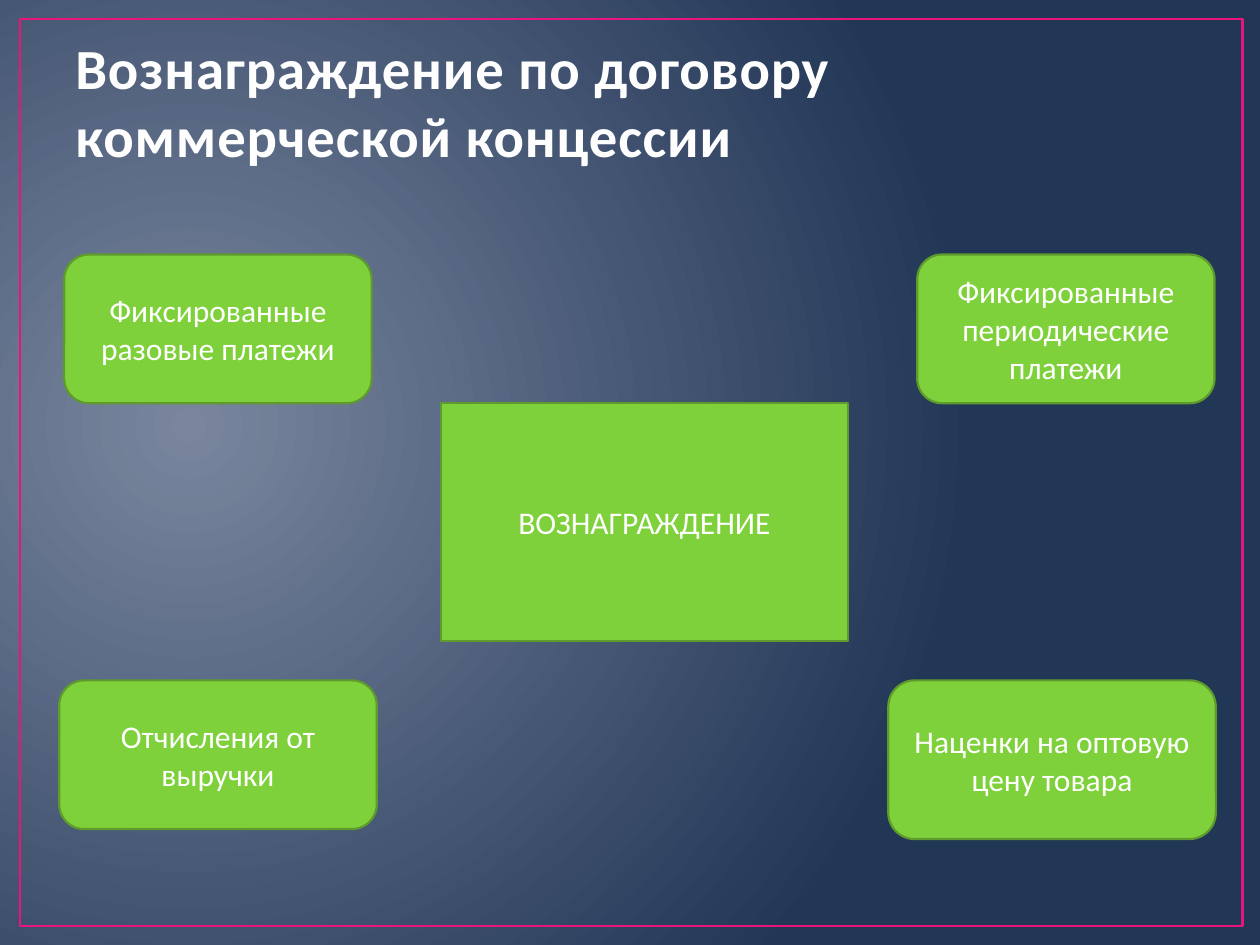
from dataclasses import dataclass

import pptx
import pptx.dml.color
import pptx.enum.shapes
import pptx.enum.text
import pptx.oxml
import pptx.oxml.ns
import pptx.util
from pptx.util import Inches

COLORS = {
    "glow": "79869E",
    "navy": "223656",
    "pink": "EA157A",
    "green": "7FD13B",
    "edge": "5E9B2C",
    "title": "FEFEFE",
    "white": "FFFFFF",
}
FONT = "Calibri"
RECT = pptx.enum.shapes.MSO_SHAPE.RECTANGLE
ROUND = pptx.enum.shapes.MSO_SHAPE.ROUNDED_RECTANGLE
ANCHOR = pptx.enum.text.MSO_ANCHOR
ALIGN = pptx.enum.text.PP_ALIGN


@dataclass
class Box:
    text: str
    left: float
    top: float
    width: float
    height: float
    kind: int = ROUND


TOP, LOW = 2.02, 5.4  # rows of payment types
BOXES = [
    Box("Фиксированные разовые платежи", 0.51, TOP, 2.44, 1.18),
    Box("Фиксированные периодические платежи", 7.28, TOP, 2.36, 1.18),
    Box("Отчисления от выручки", 0.47, LOW, 2.52, 1.18),
    Box("Наценки на оптовую цену товара", 7.05, LOW, 2.6, 1.26),
    Box("ВОЗНАГРАЖДЕНИЕ", 3.5, 3.2, 3.23, 1.89, RECT),
]


def color(name: str) -> pptx.dml.color.RGBColor:
    return pptx.dml.color.RGBColor.from_string(COLORS[name])


def add_back(slide) -> None:
    """Radial gradient, brightest near the left edge."""
    xml = f"""<p:bg {pptx.oxml.ns.nsdecls("p", "a")}><p:bgPr>
      <a:gradFill rotWithShape="1"><a:gsLst>
        <a:gs pos="0"><a:srgbClr val="{COLORS['glow']}"/></a:gs>
        <a:gs pos="100000"><a:srgbClr val="{COLORS['navy']}"/></a:gs>
      </a:gsLst><a:path path="circle">
        <a:fillToRect l="15000" t="50000" r="85000" b="60000"/>
      </a:path></a:gradFill><a:effectLst/></p:bgPr></p:bg>"""
    slide.element.cSld.insert(0, pptx.oxml.parse_xml(xml))


def add_shape(slide, box: Box, fill: str | None, line: str, weight: float):
    shape = slide.shapes.add_shape(
        box.kind, Inches(box.left), Inches(box.top),
        Inches(box.width), Inches(box.height))
    shape.shadow.inherit = False
    if fill:
        shape.fill.solid()
        shape.fill.fore_color.rgb = color(fill)
    else:
        shape.fill.background()
    shape.line.color.rgb = color(line)
    shape.line.width = pptx.util.Pt(weight)
    return shape


def add_text(shape, text: str, size: float, tint: str, anchor, align):
    frame = shape.text_frame
    frame.word_wrap = True
    frame.vertical_anchor = anchor
    para = frame.paragraphs[0]
    para.alignment = align
    run = para.add_run()
    run.text = text
    run.font.name = FONT
    run.font.size = pptx.util.Pt(size)
    run.font.color.rgb = color(tint)
    return run


def add_title(slide, text: str) -> None:
    shape = slide.shapes.add_textbox(
        Inches(0.5), Inches(0.3), Inches(9), Inches(1.09))
    run = add_text(shape, text, 32.4, "title", ANCHOR.BOTTOM, ALIGN.LEFT)
    run.font.bold = True
    run.font._element.set("spc", "50")  # letter spacing


def main() -> None:
    deck = pptx.Presentation()
    deck.slide_width, deck.slide_height = Inches(10), Inches(7.5)
    slide = deck.slides.add_slide(deck.slide_layouts[6])

    # Background and frame
    add_back(slide)
    add_shape(slide, Box("", 0.16, 0.15, 9.7, 7.2, RECT), None, "pink", 1.5)

    # Title
    add_title(slide, "Вознаграждение по договору коммерческой концессии")

    # Payment types around the central box
    for box in BOXES:
        shape = add_shape(slide, box, "green", "edge", 1.25)
        add_text(shape, box.text, 18, "white", ANCHOR.MIDDLE, ALIGN.CENTER)

    deck.save("out.pptx")


if __name__ == "__main__":
    main()
